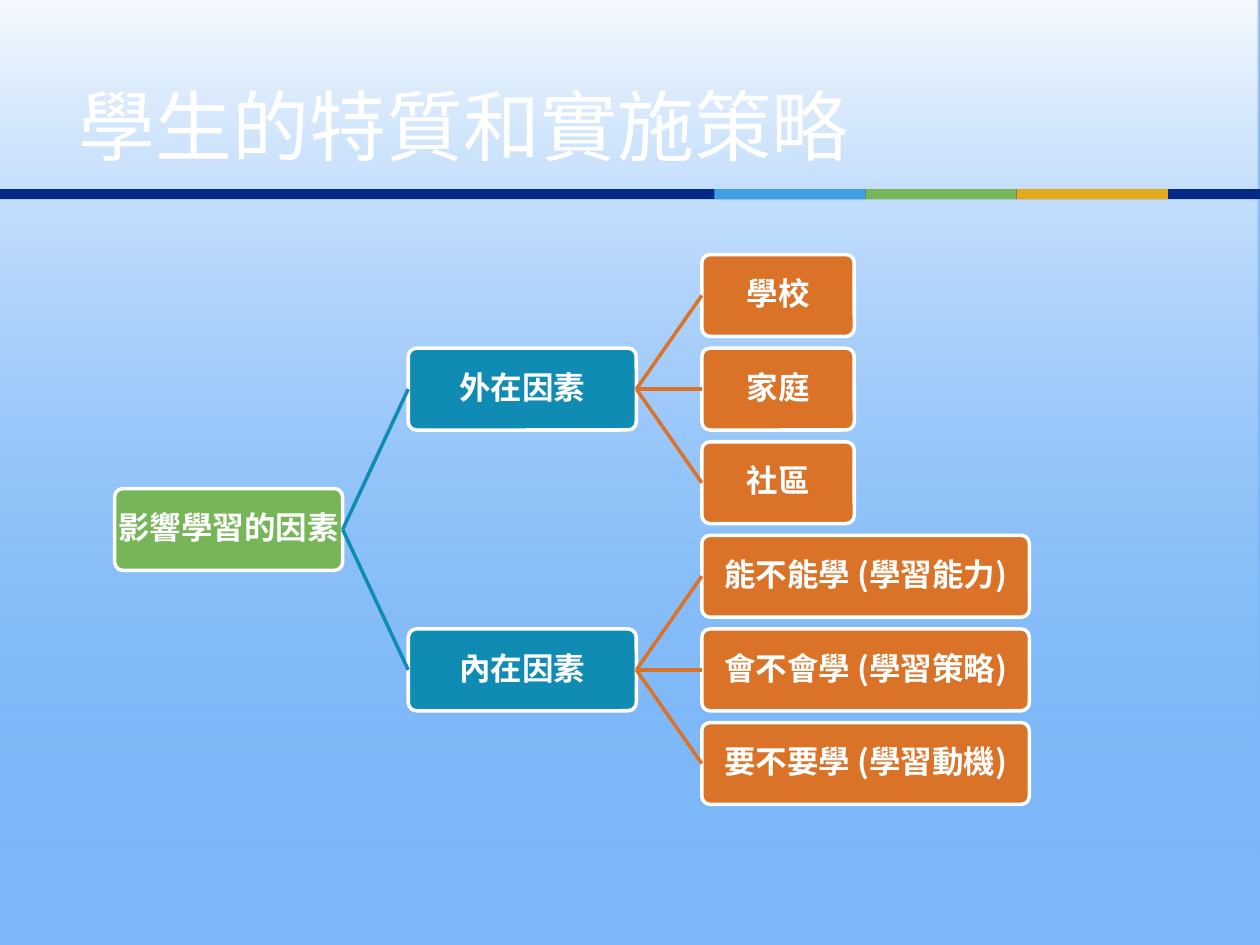
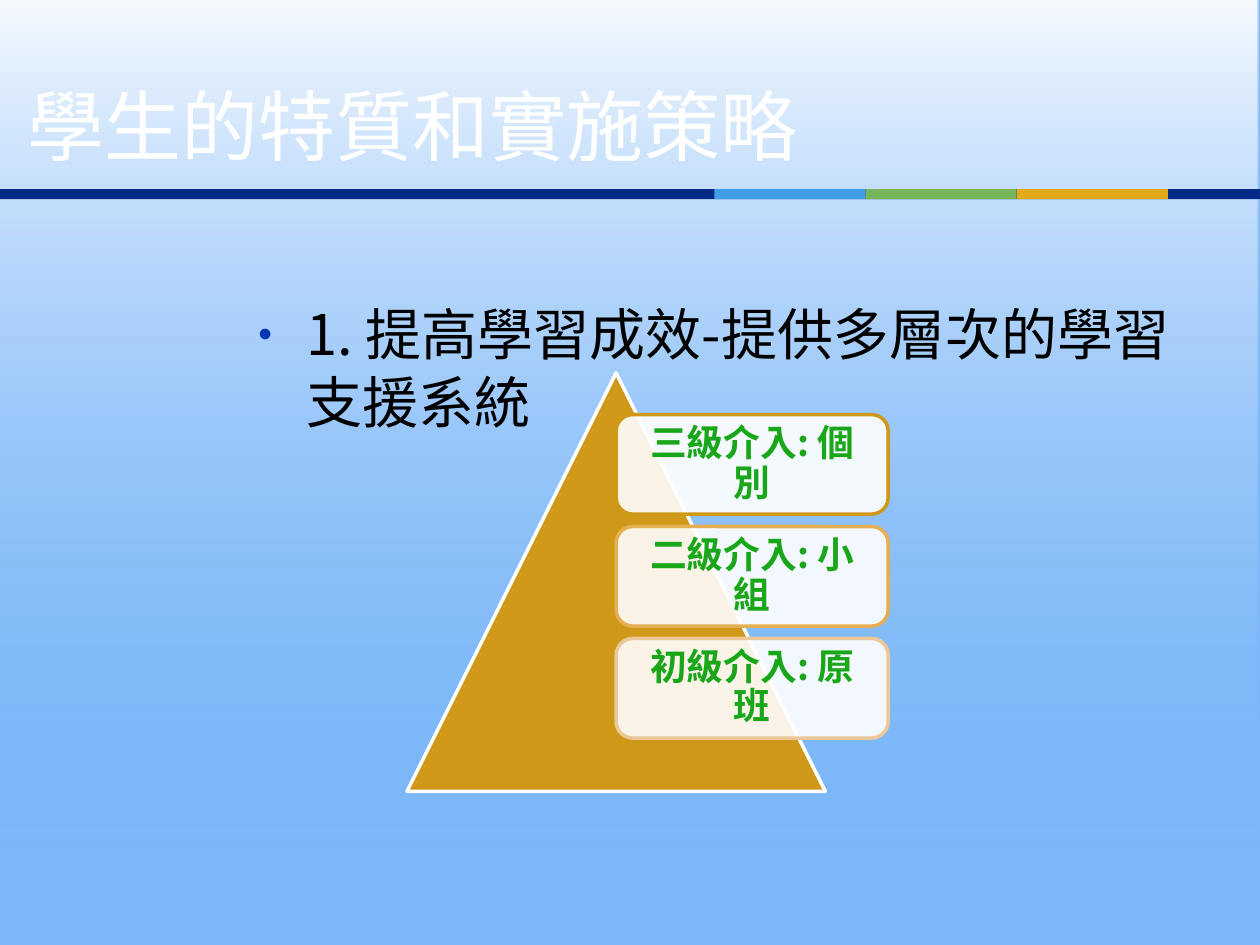
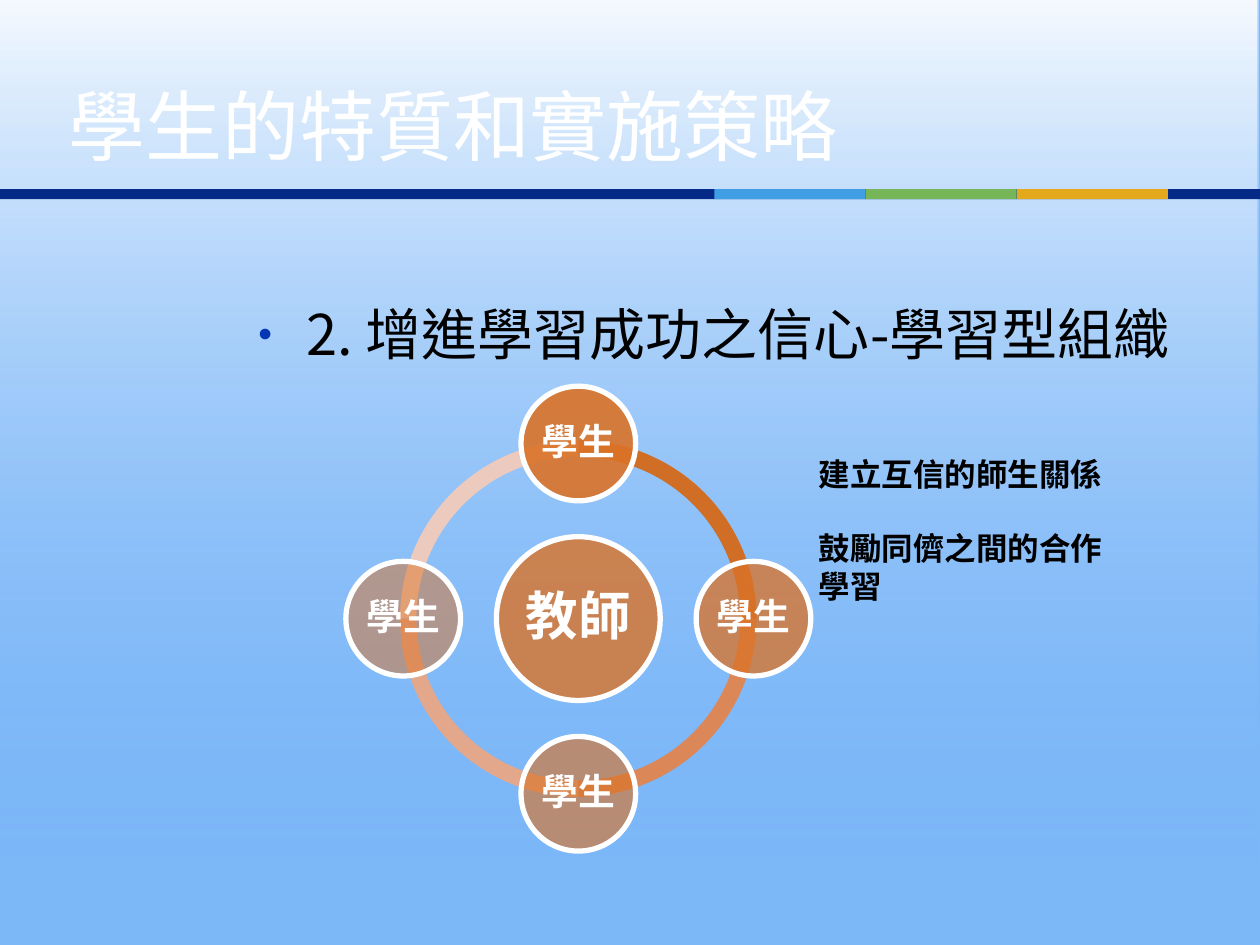
from math import cos, radians, sin

from lxml import etree
from pptx import Presentation
from pptx import util as u
from pptx.dml.color import RGBColor
from pptx.enum import shapes, text
from pptx.oxml.ns import qn

W, H = 10, 7.5
FONT = "Noto Sans CJK SC"
TITLE = "學生的特質和實施策略"
SKY, WHITE, BLACK, ORANGE = "7CB7F8", "FFFFFF", "000000", "DA7328"
TEAL, GREEN, GOLD = "108BB4", "77B559", "CF9819"
TIGHT, SINGLE = 0.9, 1.0  # line spacing inside shapes and in running text
LEFT, CENTER = text.PP_ALIGN.LEFT, text.PP_ALIGN.CENTER
TOP, MIDDLE = text.MSO_ANCHOR.TOP, text.MSO_ANCHOR.MIDDLE
MSO = shapes.MSO_SHAPE
rgb = RGBColor.from_string


def block(s, kind, box, fill, line=None, width=2, alphas=()):
    """Add a preset shape; alphas are percentages, one per fill colour."""
    sp = s.shapes.add_shape(kind, *[u.Inches(v) for v in box])
    sp.shadow.inherit = False
    if isinstance(fill, str):
        sp.fill.solid()
        sp.fill.fore_color.rgb = rgb(fill)
    else:
        sp.fill.gradient()
        sp.fill.gradient_angle = 90
        for stop, (position, color) in zip(sp.fill.gradient_stops, fill):
            stop.position, stop.color.rgb = position, rgb(color)
    for clr, alpha in zip(sp._element.spPr.iter(qn("a:srgbClr")), alphas):
        etree.SubElement(clr, qn("a:alpha"), val=str(alpha * 1000))
    if line:
        sp.line.color.rgb, sp.line.width = rgb(line), u.Pt(width)
    else:
        sp.line.fill.background()
    return sp


def write(sp, words, size, color, bold=False, align=CENTER, spacing=TIGHT,
          inset=None, wrap=True, anchor=MIDDLE):
    """Fill a shape, text box or placeholder with one formatted paragraph."""
    tf = sp.text_frame
    frame = dict(word_wrap=wrap, auto_size=text.MSO_AUTO_SIZE.NONE, vertical_anchor=anchor)
    if inset is not None:
        frame.update({f"margin_{side}": u.Inches(inset)
                      for side in ("left", "right", "top", "bottom")})
    for name, value in frame.items():
        setattr(tf, name, value)
    p = tf.paragraphs[0]
    p.alignment, p.line_spacing = align, spacing
    r = p.add_run()
    r.text = words
    for name, value in dict(size=u.Pt(size), bold=bold, name=FONT).items():
        setattr(r.font, name, value)
    r.font.color.rgb = rgb(color)
    rPr = r._r.get_or_add_rPr()
    rPr.set("lang", "zh-TW")
    etree.SubElement(rPr, qn("a:ea"), typeface=FONT)
    return p


prs = Presentation()
prs.slide_width, prs.slide_height = u.Inches(W), u.Inches(H)

# Slides with their titles and bullet lines
pages = [(0.52, None),
         (0.12, "1. 提高學習成效-提供多層次的學習支援系統"),
         (0.44, "2. 增進學習成功之信心-學習型組織")]
for left, bullet in pages:
    s = prs.slides.add_slide(prs.slide_layouts[1 if bullet else 5])
    title = s.shapes.title
    title.left, title.top, title.width, title.height = [
        u.Inches(v) for v in (left, 0.54, 0.9 * W, 0.9)]
    write(title, TITLE, 44, WHITE, align=LEFT, spacing=SINGLE)
    if bullet:
        body = s.placeholders[1]
        body.left, body.top, body.width, body.height = [
            u.Inches(v) for v in (1.95, 2.33, 7.74, 4.37)]
        p = write(body, bullet, 32, BLACK, align=LEFT, spacing=SINGLE, anchor=TOP)
        pPr = p._p.get_or_add_pPr()
        pPr.set("marL", str(u.Inches(0.38)))
        pPr.set("indent", str(-u.Inches(0.38)))
        clr = etree.SubElement(pPr, qn("a:buClr"))
        etree.SubElement(clr, qn("a:srgbClr"), val="0536B3")
        etree.SubElement(pPr, qn("a:buSzPct"), val="70000")
        etree.SubElement(pPr, qn("a:buChar"), char="•")
tree, pyramid, circle = prs.slides

# Shared background and band, placed on the master
master = prs.slide_master
master.background.fill.solid()
master.background.fill.fore_color.rgb = rgb(SKY)
backdrop = [block(tree, MSO.RECTANGLE, (-0.01, 0, W, 6.88),
                  [(0.01, SKY), (1, WHITE)], alphas=(0, 92)),
            block(tree, MSO.RECTANGLE, (0, 1.5, W, 0.08), "042986")]
for i, color in enumerate(("3F9EE4", GREEN, "E4A81B")):
    backdrop.append(block(tree, MSO.RECTANGLE, (5.67 + 1.2 * i, 1.5, 1.2, 0.08), color))
for i, sp in enumerate(backdrop):
    sp._element.nvSpPr.cNvPr.set("id", str(100 + i))
    master.shapes._spTree.insert(2 + i, sp._element)

# Slide 1: tree of factors as (words, column, row, width, colour, parent)
COL, NODE_W, NODE_H = 2.33, 1.81, 0.65
ROW = NODE_H * 8 / 7
nodes = [("影響學習的因素", 0, 2.5, NODE_W, GREEN, None)]
branches = [("外在因素", 1.21, ("學校", "家庭", "社區")),
            ("內在因素", 2.6, ("能不能學 (學習能力)", "會不會學 (學習策略)", "要不要學 (學習動機)"))]
for b, (branch, leaf_w, leaves) in enumerate(branches):
    nodes.append((branch, 1, 3 * b + 1, NODE_W, TEAL, "影響學習的因素"))
    nodes += [(leaf, 2, 3 * b + i, leaf_w, ORANGE, branch) for i, leaf in enumerate(leaves)]
drawn = {}
for words, col, row, width, color, parent in nodes:
    sp = block(tree, MSO.ROUNDED_RECTANGLE,
               (0.91 + COL * col, 2.02 + ROW * row, width, NODE_H), color, WHITE)
    sp.adjustments[0] = 0.1
    write(sp, words, 18, WHITE, bold=True, inset=0.01, wrap=False)
    drawn[words] = sp
    if parent:
        link = tree.shapes.add_connector(shapes.MSO_CONNECTOR.STRAIGHT, 0, 0, 0, 0)
        link.begin_connect(drawn[parent], 3)
        link.end_connect(sp, 1)
        link.line.color.rgb, link.line.width = rgb(color), u.Pt(2)
        etree.SubElement(link._element.spPr, qn("a:effectLst"))

# Slide 2: pyramid with three levels of support
block(pyramid, MSO.ISOSCELES_TRIANGLE, (3.23, 2.96, 3.32, 3.32), GOLD, WHITE)
LEVEL_H = 0.79
levels = [("三級介入: 個別", GOLD), ("二級介入: 小組", "E5AF51"), ("初級介入: 原班", "ECC898")]
for i, (words, color) in enumerate(levels):
    sp = block(pyramid, MSO.ROUNDED_RECTANGLE,
               (4.89, 3.29 + LEVEL_H * 9 / 8 * i, 2.16, LEVEL_H), WHITE, color, alphas=(90,))
    write(sp, words, 21, "19A719", bold=True, inset=0.09)

# Slide 3: ring of students around the teacher
CX, CY, ORBIT, RING, BAND = 4.59, 4.91, 1.39, 2.83, 0.13
arcs = [(108, 162, "EDCABE"), (54, 108, "E3A78C"), (0, 54, "DC8757"), (162, 0, "D06E26")]
for start, end, color in arcs:
    sp = block(circle, MSO.BLOCK_ARC, (CX - RING / 2, CY - RING / 2, RING, RING), color)
    for i, value in enumerate((start, end, BAND / RING)):
        sp.adjustments[i] = value
people = [("教師", 0, 0, 1.3, 30, 80)]
for i, alpha in enumerate((90, 77, 63, 50)):
    turn = radians(90 * i - 90)
    people.append(("學生", ORBIT * cos(turn), ORBIT * sin(turn), 0.91, 21, alpha))
for words, dx, dy, size, points, alpha in people:
    sp = block(circle, MSO.OVAL, (CX + dx - size / 2, CY + dy - size / 2, size, size),
               ORANGE, WHITE, 3, alphas=(alpha,))
    write(sp, words, points, WHITE, bold=True, inset=0.03, wrap=False)

# Slide 3: remarks beside the ring
for top, height, words in [(3.56, 0.4, "建立互信的師生關係"), (4.15, 0.71, "鼓勵同儕之間的合作學習")]:
    sp = circle.shapes.add_textbox(*[u.Inches(v) for v in (6.4, top, 2.59, height)])
    write(sp, words, 18, BLACK, bold=True, align=LEFT, spacing=SINGLE, anchor=TOP)

prs.save("out.pptx")
